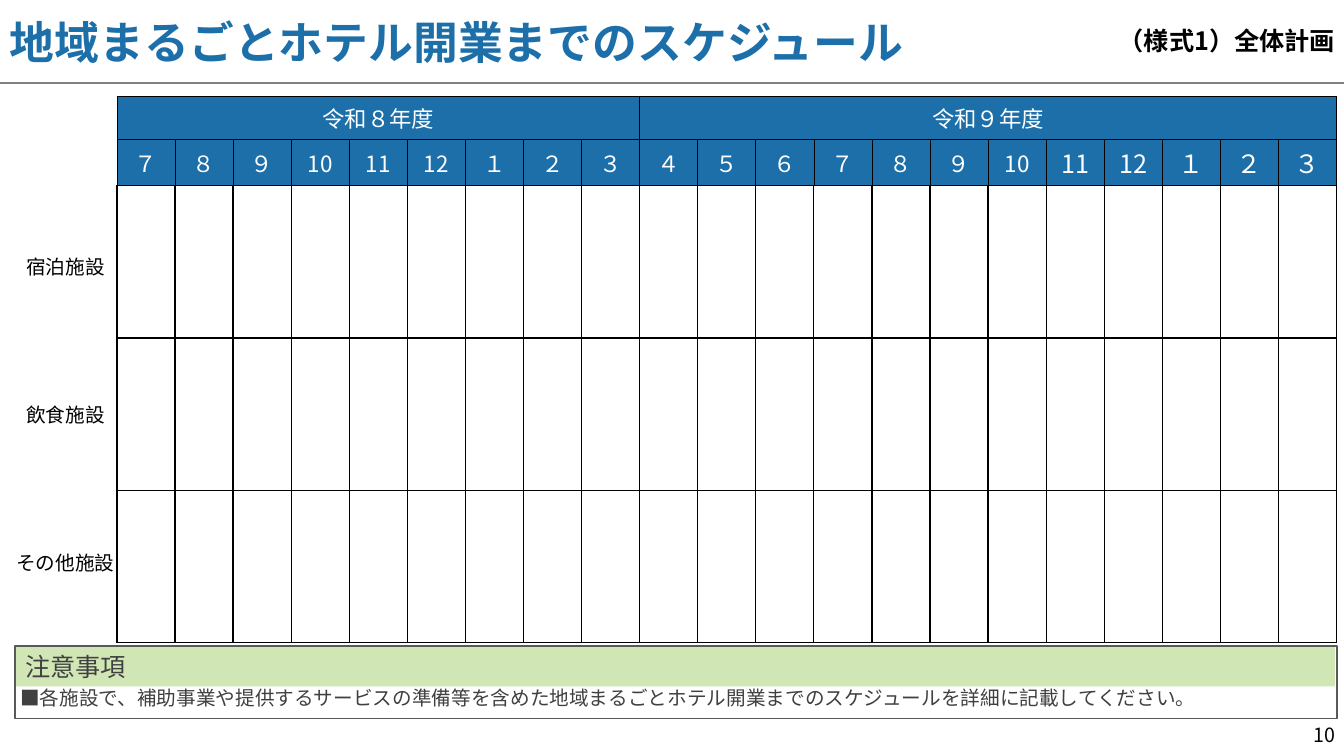
"""Build the opening schedule slide with its month grid and notes."""
from dataclasses import dataclass

from lxml import etree
from pptx import Presentation
from pptx.dml.color import RGBColor
from pptx.enum.shapes import MSO_CONNECTOR, MSO_SHAPE
from pptx.enum.text import MSO_ANCHOR, PP_ALIGN
from pptx.oxml.ns import qn
from pptx.util import Inches, Pt

LEFT, CENTER, RIGHT = PP_ALIGN.LEFT, PP_ALIGN.CENTER, PP_ALIGN.RIGHT
TOP, MIDDLE = MSO_ANCHOR.TOP, MSO_ANCHOR.MIDDLE
RECTANGLE, STRAIGHT = MSO_SHAPE.RECTANGLE, MSO_CONNECTOR.STRAIGHT

FONT = "Noto Sans CJK JP"
BLUE = RGBColor(0x1D, 0x6F, 0xA9)
GREEN = RGBColor(0xD1, 0xE6, 0xB5)
WHITE = RGBColor(0xFF, 0xFF, 0xFF)
BLACK = RGBColor(0x00, 0x00, 0x00)
CHARCOAL = RGBColor(0x40, 0x40, 0x40)
FRAME_GRAY = RGBColor(0x59, 0x59, 0x59)
RULE_GRAY = RGBColor(0x80, 0x80, 0x80)

SLIDE_WIDTH = 13.33
GRID_WIDTH = 12.1
ROW_HEIGHTS = [0.4, 0.43, 1.51, 1.51, 1.51]
FIRST_LARGE_MONTH = 16


@dataclass
class Label:
    text: str
    left: float
    top: float
    width: float
    height: float
    size: int
    color: RGBColor = BLACK
    align: PP_ALIGN = LEFT
    anchor: MSO_ANCHOR = TOP
    bold: bool = False


@dataclass
class FiscalYear:
    name: str
    months: list[str]


YEARS = [
    FiscalYear("令和８年度", ["７", "８", "９", "10", "11", "12", "１", "２", "３"]),
    FiscalYear("令和９年度", ["４", "５", "６", "７", "８", "９", "10", "11", "12", "１", "２", "３"]),
]
HEADINGS = [
    Label("地域まるごとホテル開業までのスケジュール", 0, 0, 11.13, 0.82, 32, BLUE, anchor=MIDDLE, bold=True),
    Label("（様式1）全体計画", 10.32, 0, 3.02, 0.8, 18, align=RIGHT, anchor=MIDDLE, bold=True),
    Label("10", 12.67, 7.12, 0.67, 0.38, 14, align=RIGHT),
]
FACILITIES = [
    Label(name, 0, 2.48 + 1.47 * row, 1.3, 0.34, 14, align=CENTER)
    for row, name in enumerate(["宿泊施設", "飲食施設", "その他施設"])
]
NOTE_TITLE = Label("注意事項", 0.15, 6.42, 13.09, 0.39, 18, CHARCOAL, anchor=MIDDLE)
NOTE = Label(
    "■各施設で、補助事業や提供するサービスの準備等を含めた地域まるごとホテル開業までのスケジュールを詳細に記載してください。",
    0.2, 6.92, 12.99, 0.13, 14, CHARCOAL,
)


def write(frame, text: str, size: int, color: RGBColor, align: PP_ALIGN, bold: bool = False) -> None:
    paragraph = frame.paragraphs[0]
    paragraph.alignment = align
    run = paragraph.add_run()
    run.text = text
    run.font.size = Pt(size)
    run.font.bold = bold
    run.font.color.rgb = color
    run.font.name = FONT
    etree.SubElement(run.font._element, qn("a:ea"), typeface=FONT)


def fill_label(shape, label: Label) -> None:
    frame = shape.text_frame
    frame.word_wrap = True
    frame.vertical_anchor = label.anchor
    write(frame, label.text, label.size, label.color, label.align, label.bold)


def bounds(label: Label) -> list[int]:
    return [Inches(v) for v in (label.left, label.top, label.width, label.height)]


def add_label(slide, label: Label):
    box = slide.shapes.add_textbox(*bounds(label))
    fill_label(box, label)
    return box.text_frame


def set_borders(cell, top: float, bottom: float, sides: float) -> None:
    properties = cell._tc.get_or_add_tcPr()
    for tag, width in (("a:lnL", sides), ("a:lnR", sides), ("a:lnT", top), ("a:lnB", bottom)):
        line = etree.SubElement(properties, qn(tag), w=str(Pt(width)))
        fill = etree.SubElement(line, qn("a:solidFill"))
        etree.SubElement(fill, qn("a:srgbClr"), val=str(BLACK))


def add_schedule(slide) -> None:
    months = [month for year in YEARS for month in year.months]
    grid = slide.shapes.add_table(
        len(ROW_HEIGHTS), len(months), Inches(1.16), Inches(0.96),
        Inches(GRID_WIDTH), Inches(sum(ROW_HEIGHTS)),
    ).table
    grid.first_row = grid.horz_banding = False
    for column in grid.columns:
        column.width = Inches(GRID_WIDTH / len(months))
    for index, height in enumerate(ROW_HEIGHTS):
        grid.rows[index].height = Inches(height)
        for cell in grid.rows[index].cells:
            if index < 2:
                set_borders(cell, 0.5, 0.5 if index == 0 else 1, 0.5)
                cell.fill.solid()
                cell.fill.fore_color.rgb = BLUE
                cell.vertical_anchor = MIDDLE
            else:
                set_borders(cell, 1, 1, 1)
                cell.fill.background()
    start = 0
    for year in YEARS:
        end = start + len(year.months)
        heading = grid.cell(0, start)
        heading.merge(grid.cell(0, end - 1))
        write(heading.text_frame, year.name, 16, WHITE, CENTER)
        start = end
    for index, month in enumerate(months):
        size = 18 if index >= FIRST_LARGE_MONTH else 16
        write(grid.cell(1, index).text_frame, month, size, WHITE, CENTER)


def add_notes_panel(slide) -> None:
    band = slide.shapes.add_shape(RECTANGLE, *bounds(NOTE_TITLE))
    band.shadow.inherit = False
    band.fill.solid()
    band.fill.fore_color.rgb = GREEN
    band.line.fill.background()
    fill_label(band, NOTE_TITLE)
    outline = slide.shapes.add_shape(RECTANGLE, Inches(0.15), Inches(6.41), Inches(13.11), Inches(0.72))
    outline.shadow.inherit = False
    outline.fill.background()
    outline.line.color.rgb = FRAME_GRAY
    outline.line.width = Pt(1)
    note = add_label(slide, NOTE)
    note.margin_left = note.margin_right = note.margin_bottom = 0
    note.margin_top = Inches(0.01)
    note.paragraphs[0].line_spacing = Pt(8)


def add_title_rule(slide) -> None:
    rule = slide.shapes.add_connector(STRAIGHT, 0, Inches(0.82), Inches(SLIDE_WIDTH), Inches(0.82))
    rule.line.color.rgb = RULE_GRAY
    rule.line.width = Pt(1.5)
    etree.SubElement(rule._element.spPr, qn("a:effectLst"))


def main() -> None:
    deck = Presentation()
    deck.slide_width = Inches(SLIDE_WIDTH)
    deck.slide_height = Inches(7.5)
    slide = deck.slides.add_slide(deck.slide_layouts[6])
    add_title_rule(slide)
    add_schedule(slide)
    add_notes_panel(slide)
    for label in HEADINGS + FACILITIES:
        add_label(slide, label)
    deck.save("out.pptx")


if __name__ == "__main__":
    main()
